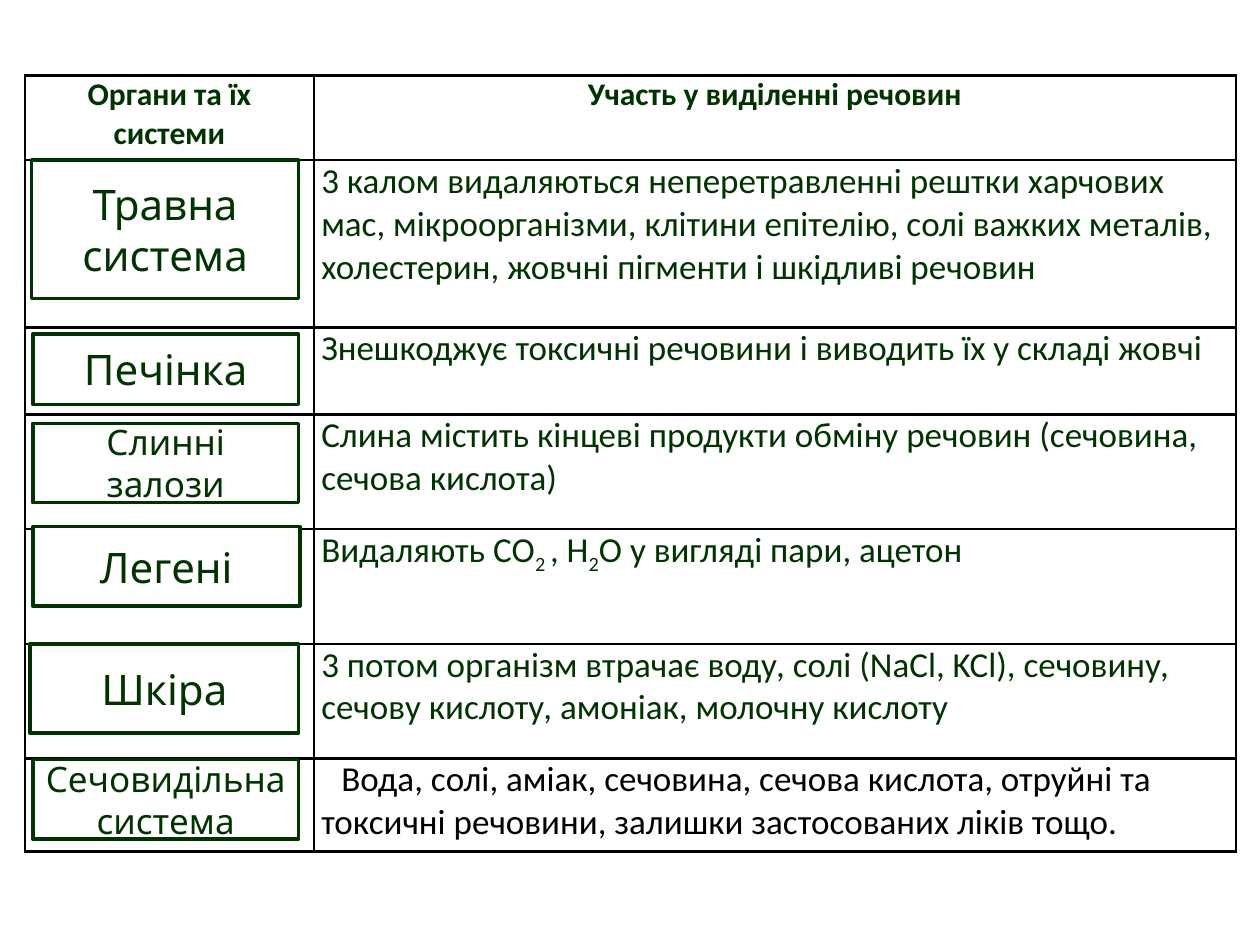
"""Build a slide with a table of organs and their part in excretion."""
import pptx
import pptx.dml.color
import pptx.enum.shapes
import pptx.enum.text
import pptx.oxml
import pptx.oxml.ns
import pptx.util
from pptx.util import Inches, Pt

GREEN, BLACK, WHITE = "003300", "000000", "FFFFFF"
CENTER = pptx.enum.text.PP_ALIGN.CENTER
HEADERS = ["Органи та їх системи", "Участь у виділенні речовин"]
SUBSTANCES = [
    ["3 калом видаляються неперетравленні рештки харчових мас, мікроорганізми, "
     "клітини епітелію, солі важких металів, холестерин, жовчні пігменти і шкідливі речовин"],
    ["Знешкоджує токсичні речовини і виводить їх у складі жовчі"],
    ["Слина містить кінцеві продукти обміну речовин (сечовина, сечова кислота)"],
    ["Видаляють СО", "2 ", ", Н", "2", "О у вигляді пари, ацетон"],
    ["3 потом організм втрачає воду, солі (NaCl, KCl), сечовину, сечову кислоту, "
     "амоніак, молочну кислоту"],
    ["Вода, солі, аміак, сечовина, сечова кислота, отруйні та токсичні речовини, "
     "залишки застосованих ліків тощо."],
]
ORGANS = [
    ("Травна система", 24, (0.25, 1.27, 2.12, 1.1)),
    ("Печінка", 24, (0.26, 2.65, 2.11, 0.56)),
    ("Слинні залози", 20, (0.26, 3.36, 2.11, 0.63)),
    ("Легені", 24, (0.26, 4.18, 2.12, 0.63)),
    ("Шкіра", 24, (0.24, 5.11, 2.13, 0.71)),
    ("Сечовидільна система", 20, (0.26, 6.03, 2.11, 0.63)),
]
COLUMN_WIDTHS = [2.29, 7.32]
ROW_HEIGHTS = [0.67, 1.33, 0.69, 0.91, 0.91, 0.91, 0.74]


def color(value):
    return pptx.dml.color.RGBColor.from_string(value)


def style_font(paragraph, name, size, value, bold=False):
    font = paragraph.font
    font.name, font.size, font.bold = name, Pt(size), bold
    font.color.rgb = color(value)


def format_cell(cell):
    cell.margin_left = cell.margin_right = Inches(0.06)
    cell.margin_top = cell.margin_bottom = 0
    properties = cell._tc.get_or_add_tcPr()
    for side in ("lnL", "lnR", "lnT", "lnB"):
        properties.append(pptx.oxml.parse_xml(
            f'<a:{side} {pptx.oxml.ns.nsdecls("a")} w="{Pt(1.5)}"><a:solidFill>'
            f'<a:srgbClr val="{BLACK}"/></a:solidFill></a:{side}>'))
    cell.fill.background()


def add_excretion_table(slide):
    table = slide.shapes.add_table(
        len(ROW_HEIGHTS), len(COLUMN_WIDTHS), Inches(0.2), Inches(0.6),
        Inches(sum(COLUMN_WIDTHS)), Inches(sum(ROW_HEIGHTS))).table
    table.first_row = table.horz_banding = False
    for column, width in zip(table.columns, COLUMN_WIDTHS):
        column.width = Inches(width)
    for row, height in zip(table.rows, ROW_HEIGHTS):
        row.height = Inches(height)
    for cell in table.iter_cells():
        format_cell(cell)

    for index, header in enumerate(HEADERS):
        paragraph = table.cell(0, index).text_frame.paragraphs[0]
        paragraph.text = header
        paragraph.alignment = CENTER
        style_font(paragraph, "Calibri", 18, GREEN, bold=True)

    for row_index, parts in enumerate(SUBSTANCES, start=1):
        paragraph = table.cell(row_index, 1).text_frame.paragraphs[0]
        is_last = row_index == len(SUBSTANCES)
        if is_last:
            paragraph._p.get_or_add_pPr().set("indent", str(Inches(0.16)))
        style_font(paragraph, "Calibri", 20, BLACK if is_last else GREEN)
        for part_index, part in enumerate(parts):
            run = paragraph.add_run()
            run.text = part
            if part_index % 2:
                run._r.get_or_add_rPr().set("baseline", "-25000")


def add_organ_box(slide, name, size, bounds):
    shape = slide.shapes.add_shape(
        pptx.enum.shapes.MSO_SHAPE.RECTANGLE, *map(Inches, bounds))
    shape.shadow.inherit = False
    shape.fill.solid()
    shape.fill.fore_color.rgb = color(WHITE)
    shape.line.color.rgb = color(GREEN)
    shape.line.width = Pt(2)
    shape.text_frame.word_wrap = True
    shape.text_frame.vertical_anchor = pptx.enum.text.MSO_ANCHOR.MIDDLE
    paragraph = shape.text_frame.paragraphs[0]
    paragraph.text = name
    paragraph.alignment = CENTER
    style_font(paragraph, "Cabin", size, GREEN)


def main():
    presentation = pptx.Presentation()
    presentation.slide_width, presentation.slide_height = Inches(10), Inches(7.5)
    slide = presentation.slides.add_slide(presentation.slide_layouts[6])
    add_excretion_table(slide)
    for organ in ORGANS:
        add_organ_box(slide, *organ)
    presentation.save("out.pptx")


if __name__ == "__main__":
    main()
